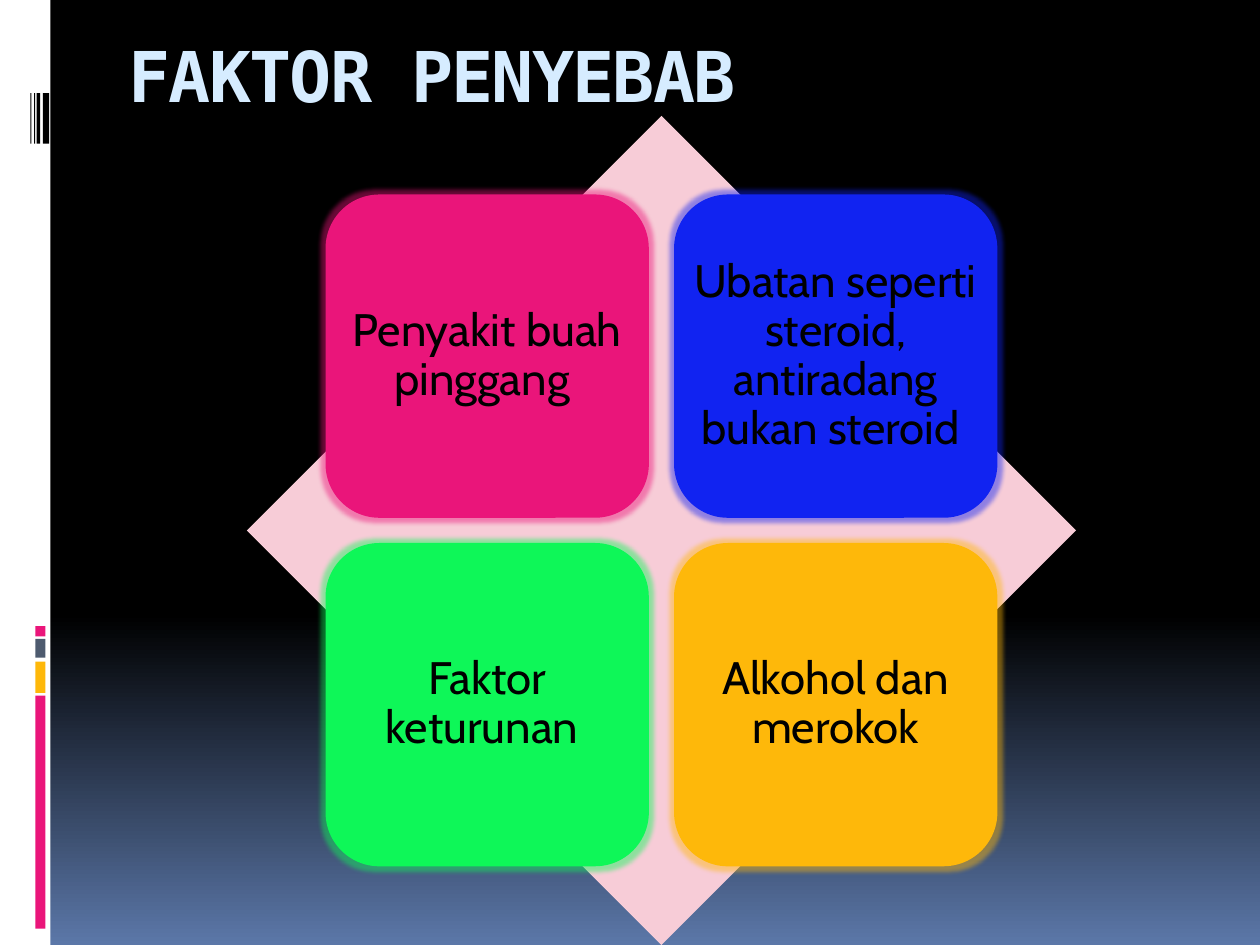
from copy import deepcopy

from lxml import etree
from pptx import Presentation
from pptx import util as u
from pptx.dml.color import RGBColor
from pptx.enum import shapes, text
from pptx.oxml.ns import qn

# Content
TITLE = "FAKTOR PENYEBAB"
COLORS = {
    "black": "000000", "sky": "5B77A8", "white": "FFFFFF", "ice": "D6ECFF",
    "pink": "EA157A", "blush": "F7CCD7", "blue": "1123F1",
    "green": "0EF758", "amber": "FEB80A", "slate": "4E5B6F",
}
CARDS = [  # read row by row
    ("Penyakit buah pinggang ", "pink"),
    ("Ubatan seperti steroid, antiradang bukan steroid ", "blue"),
    ("Faktor keturunan ", "green"),
    ("Alkohol dan merokok", "amber"),
]
BACKGROUND = [(0, "black"), (0.65, "black"), (1, "sky")]
BLOCKS = [(4.97, 0.08, "pink"), (5.07, 0.15, "slate"),
          (5.25, 0.25, "amber"), (5.52, 1.85, "pink")]  # top, height, colour
BARCODE = [(0.24, 0.01), (0.27, 0.01), (0.29, 0.03), (0.34, 0.05)]  # left, width

# Layout in inches
W, H = 10, 7.5
DIAMOND = 6.58
DIAMOND_LEFT, DIAMOND_TOP = 1.96, H - DIAMOND
CARD = DIAMOND * 0.39
GAP = 0.2
MARGIN = (DIAMOND - 2 * CARD - GAP) / 2


def rgb(name):
    return RGBColor.from_string(COLORS[name])


def add_block(slide, kind, left, top, width, height, color):
    sp = slide.shapes.add_shape(kind, *map(u.Inches, (left, top, width, height)))
    sp.shadow.inherit = False
    sp.fill.solid()
    sp.fill.fore_color.rgb = rgb(color)
    sp.line.fill.background()
    return sp


def add_glow(sp, color):
    effects = sp._element.spPr.find(qn("a:effectLst"))
    glow = etree.SubElement(effects, qn("a:glow"), rad=str(u.Pt(5)))
    clr = etree.SubElement(glow, qn("a:srgbClr"), val=COLORS[color])
    etree.SubElement(clr, qn("a:alpha"), val="45000")


def style(p, font, size, color):
    p.font.name = font
    p.font.size = u.Pt(size)
    p.font.color.rgb = rgb(color)


def set_background(slide):
    fill = slide.background.fill
    fill.gradient()
    fill.gradient_angle = 270
    stops = slide.background._cSld.find(".//" + qn("a:gsLst"))
    stops.append(deepcopy(stops[0]))
    for stop, (position, color) in zip(fill.gradient_stops, BACKGROUND):
        stop.position = position
        stop.color.rgb = rgb(color)


def add_title(slide):
    title = slide.shapes.title
    title.left, title.top, title.width, title.height = map(
        u.Inches, (0.92, 0.17, 8.5, 1))
    tf = title.text_frame
    tf.text = TITLE
    tf.vertical_anchor = text.MSO_ANCHOR.TOP
    tf.margin_top = u.Inches(0.09)
    p = tf.paragraphs[0]
    p.alignment = text.PP_ALIGN.LEFT
    style(p, "DejaVu Sans Mono", 40, "ice")
    p.font.bold = True
    p.runs[0].font._element.set("spc", "-100")


def add_card(slide, index, label, color):
    row, col = divmod(index, 2)
    left = DIAMOND_LEFT + MARGIN + col * (CARD + GAP)
    top = DIAMOND_TOP + MARGIN + row * (CARD + GAP)
    sp = add_block(slide, shapes.MSO_SHAPE.ROUNDED_RECTANGLE,
                   left, top, CARD, CARD, color)
    add_glow(sp, color)
    tf = sp.text_frame
    tf.text = label
    tf.word_wrap = True
    tf.vertical_anchor = text.MSO_ANCHOR.MIDDLE
    tf.margin_left = tf.margin_right = tf.margin_top = tf.margin_bottom = 0
    p = tf.paragraphs[0]
    p.alignment = text.PP_ALIGN.CENTER
    p.line_spacing = 0.9
    style(p, "Cabin", 26, "black")


def main():
    prs = Presentation()
    prs.slide_width, prs.slide_height = u.Inches(W), u.Inches(H)
    slide = prs.slides.add_slide(prs.slide_layouts[5])
    set_background(slide)
    rect = shapes.MSO_SHAPE.RECTANGLE

    # Side strip
    add_block(slide, rect, 0, 0, 0.4, H, "white")
    for top, height, color in BLOCKS:
        add_block(slide, rect, 0.28, top, 0.08, height, color)
    for left, width in BARCODE:
        add_block(slide, rect, left, 0.74, width, 0.4, "black")

    add_title(slide)

    # Diamond with a two by two grid of cards
    add_block(slide, shapes.MSO_SHAPE.DIAMOND, DIAMOND_LEFT, DIAMOND_TOP,
              DIAMOND, DIAMOND, "blush")
    for i, (label, color) in enumerate(CARDS):
        add_card(slide, i, label, color)

    prs.save("out.pptx")


if __name__ == "__main__":
    main()
